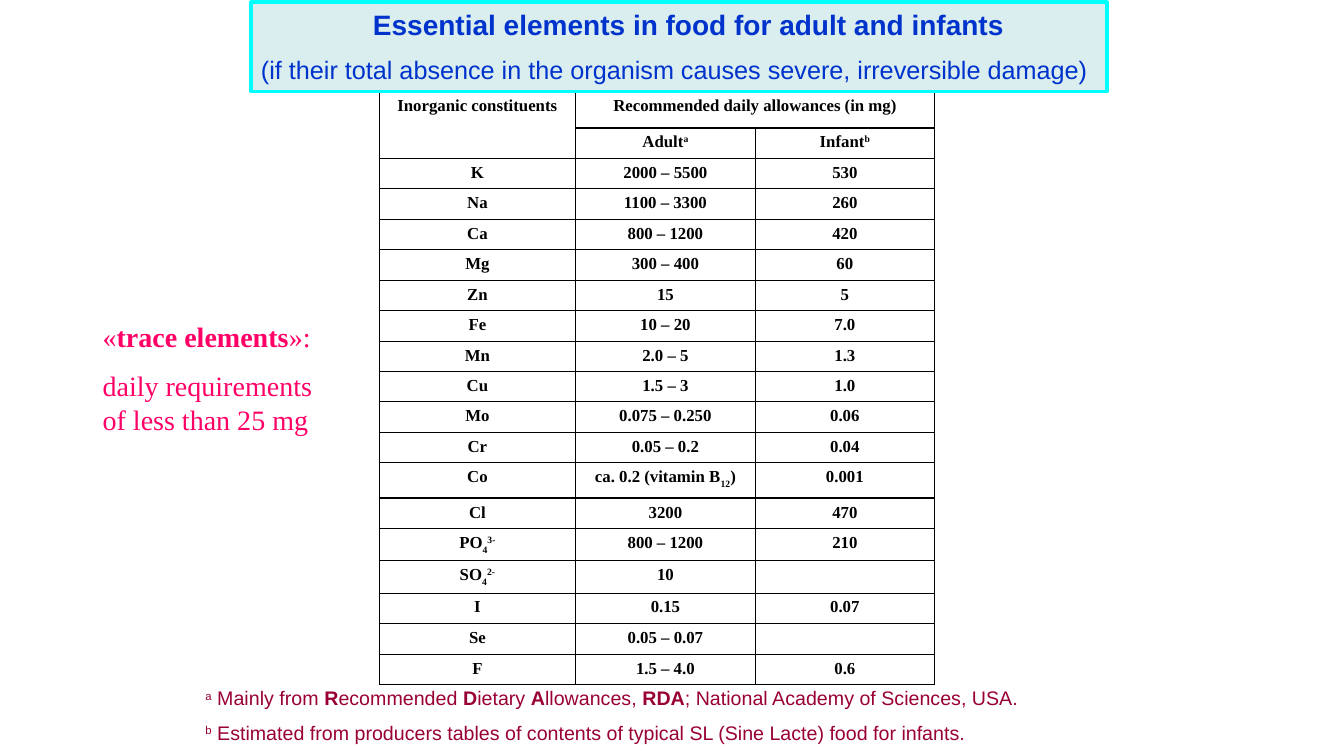
from dataclasses import dataclass

from lxml import etree
from pptx import Presentation
from pptx import util as u
from pptx.dml.color import RGBColor
from pptx.enum import shapes, text
from pptx.oxml import ns


@dataclass(frozen=True)
class Theme:
    sans: str = "Arial"
    serif: str = "Times New Roman"
    ink: str = "000000"
    title: str = "0033CC"
    banner: str = "DAEDEF"
    frame: str = "00FFFF"
    note: str = "990033"
    accent: str = "FF0066"
    large: int = 20
    medium: int = 18
    small: int = 14
    table: int = 12
    frame_line: float = 2.25
    thin: float = 0.75
    heavy: float = 1
    spacing: float = 0.56


THEME = Theme()
WIDTH, HEIGHT = u.Inches(13.33), u.Inches(7.5)
BOLD, SUPER, SUB = "bold", "super", "sub"
BASELINES = {SUPER: "30000", SUB: "-30000"}

HEADER_ROWS = 2
COLUMNS = [14.63, 13.35, 13.35]
ROW, TITLE_ROW, COBALT_ROW, SULPHATE_ROW = 4.03, 4.8, 4.67, 4.27
ROW_HEIGHTS = {"Inorganic constituents": TITLE_ROW, "Co": COBALT_ROW, "SO": SULPHATE_ROW}
HEAVY_BELOW = {"Co", "F"}

ALLOWANCES = [
    (["Inorganic constituents"], ["Recommended daily allowances (in mg)"], []),
    ([], ["Adult", ("a", SUPER)], ["Infant", ("b", SUPER)]),
    (["K"], ["2000 – 5500"], ["530"]),
    (["Na"], ["1100 – 3300"], ["260"]),
    (["Ca"], ["800 – 1200"], ["420"]),
    (["Mg"], ["300 – 400"], ["60"]),
    (["Zn"], ["15"], ["5"]),
    (["Fe"], ["10 – 20"], ["7.0"]),
    (["Mn"], ["2.0 – 5"], ["1.3"]),
    (["Cu"], ["1.5 – 3"], ["1.0"]),
    (["Mo"], ["0.075 – 0.250"], ["0.06"]),
    (["Cr"], ["0.05 – 0.2"], ["0.04"]),
    (["Co"], ["ca. 0.2 (vitamin B", ("12", SUB), ")"], ["0.001"]),
    (["Cl"], ["3200"], ["470"]),
    (["PO", ("4", SUB), ("3-", SUPER)], ["800 – 1200"], ["210"]),
    (["SO", ("4", SUB), ("2-", SUPER)], ["10"], []),
    (["I"], ["0.15"], ["0.07"]),
    (["Se"], ["0.05 – 0.07"], []),
    (["F"], ["1.5 – 4.0"], ["0.6"]),
]

FOOTNOTES = [
    [("a", SUPER), " Mainly from ", ("R", BOLD), "ecommended ", ("D", BOLD), "ietary ",
     ("A", BOLD), "llowances, ", ("RDA", BOLD), "; National Academy of Sciences, USA."],
    [("b", SUPER),
     " Estimated from producers tables of contents of typical SL (Sine Lacte) food for infants."],
]


def across(percent):
    return int(WIDTH * percent / 100)


def down(percent):
    return int(HEIGHT * percent / 100)


def area(left, top, width, height):
    return across(left), down(top), across(width), down(height)


def add_spans(para, spans, font, size, color, bold=False):
    for item in spans:
        words, mark = (item, None) if isinstance(item, str) else item
        span = para.add_run()
        span.text = words
        span.font.name = font
        span.font.size = u.Pt(size)
        span.font.bold = bold or mark == BOLD
        span.font.color.rgb = RGBColor.from_string(color)
        if mark in BASELINES:
            span._r.get_or_add_rPr().set("baseline", BASELINES[mark])


def next_para(frame, size):
    if not frame.paragraphs[0].runs:
        return frame.paragraphs[0]
    para = frame.add_paragraph()
    para.space_before = u.Pt(round(size * THEME.spacing, 1))
    return para


def add_text(page, place, paras, font, size, color):
    frame = page.shapes.add_textbox(*area(*place)).text_frame
    frame.word_wrap = True
    for spans in paras:
        add_spans(next_para(frame, size), spans, font, size, color)


def add_banner(page):
    box = page.shapes.add_shape(shapes.MSO_SHAPE.RECTANGLE, *area(18.68, 0.27, 63.69, 11.87))
    box.shadow.inherit = False
    box.fill.solid()
    box.fill.fore_color.rgb = RGBColor.from_string(THEME.banner)
    box.line.color.rgb = RGBColor.from_string(THEME.frame)
    box.line.width = u.Pt(THEME.frame_line)
    frame = box.text_frame
    frame.word_wrap = True
    frame.vertical_anchor = text.MSO_ANCHOR.TOP
    lines = [
        ("Essential elements in food for adult and infants", THEME.large, True, 8.33),
        ("(if their total absence in the organism causes severe, irreversible damage)",
         THEME.medium, False, 0),
    ]
    for words, size, bold, indent in lines:
        para = next_para(frame, size)
        para.alignment = text.PP_ALIGN.LEFT
        para._p.get_or_add_pPr().set("marL", str(across(indent)))
        add_spans(para, [words], THEME.sans, size, THEME.title, bold)


def set_borders(cell, top, bottom, side):
    properties = cell._tc.get_or_add_tcPr()
    for edge, points in (("L", side), ("R", side), ("T", top), ("B", bottom)):
        line = etree.SubElement(properties, ns.qn(f"a:ln{edge}"), w=str(u.Pt(points)))
        fill = etree.SubElement(line, ns.qn("a:solidFill"))
        etree.SubElement(fill, ns.qn("a:srgbClr"), val=THEME.ink)


def fill_cell(cell, spans):
    cell.fill.background()
    para = cell.text_frame.paragraphs[0]
    para.alignment = text.PP_ALIGN.CENTER
    add_spans(para, spans, THEME.serif, THEME.table, THEME.ink, True)
    if not spans:
        etree.SubElement(para._p, ns.qn("a:endParaRPr"), sz=str(THEME.table * 100))


def add_allowances(page):
    names = [row[0][0] if row[0] else "" for row in ALLOWANCES]
    heights = [ROW_HEIGHTS.get(name, ROW) for name in names]
    place = area(28.21, 12.13, sum(COLUMNS), sum(heights))
    table = page.shapes.add_table(len(ALLOWANCES), len(COLUMNS), *place).table
    table.first_row = table.horz_banding = False
    for column, width in zip(table.columns, COLUMNS):
        column.width = across(width)
    top = THEME.heavy
    for index, (row, cells) in enumerate(zip(table.rows, ALLOWANCES)):
        row.height = down(heights[index])
        header = index < HEADER_ROWS
        side = THEME.heavy if header else THEME.thin
        bottom = THEME.heavy if header or names[index] in HEAVY_BELOW else THEME.thin
        for cell, spans in zip(row.cells, cells):
            set_borders(cell, top, bottom, side)
            fill_cell(cell, spans)
        top = bottom
    table.cell(0, 0).merge(table.cell(1, 0))
    table.cell(0, 1).merge(table.cell(0, 2))


def main():
    deck = Presentation()
    deck.slide_width, deck.slide_height = WIDTH, HEIGHT
    page = deck.slides.add_slide(deck.slide_layouts[6])
    add_allowances(page)
    add_banner(page)
    add_text(page, (14.55, 90.13, 72.09, 9.87), FOOTNOTES, THEME.sans, THEME.small, THEME.note)
    trace = [["«", ("trace elements", BOLD), "»:"], ["daily requirements of less than 25 mg"]]
    add_text(page, (6.9, 41.6, 18.75, 17.07), trace, THEME.serif, THEME.large, THEME.accent)
    deck.save("out.pptx")


if __name__ == "__main__":
    main()
